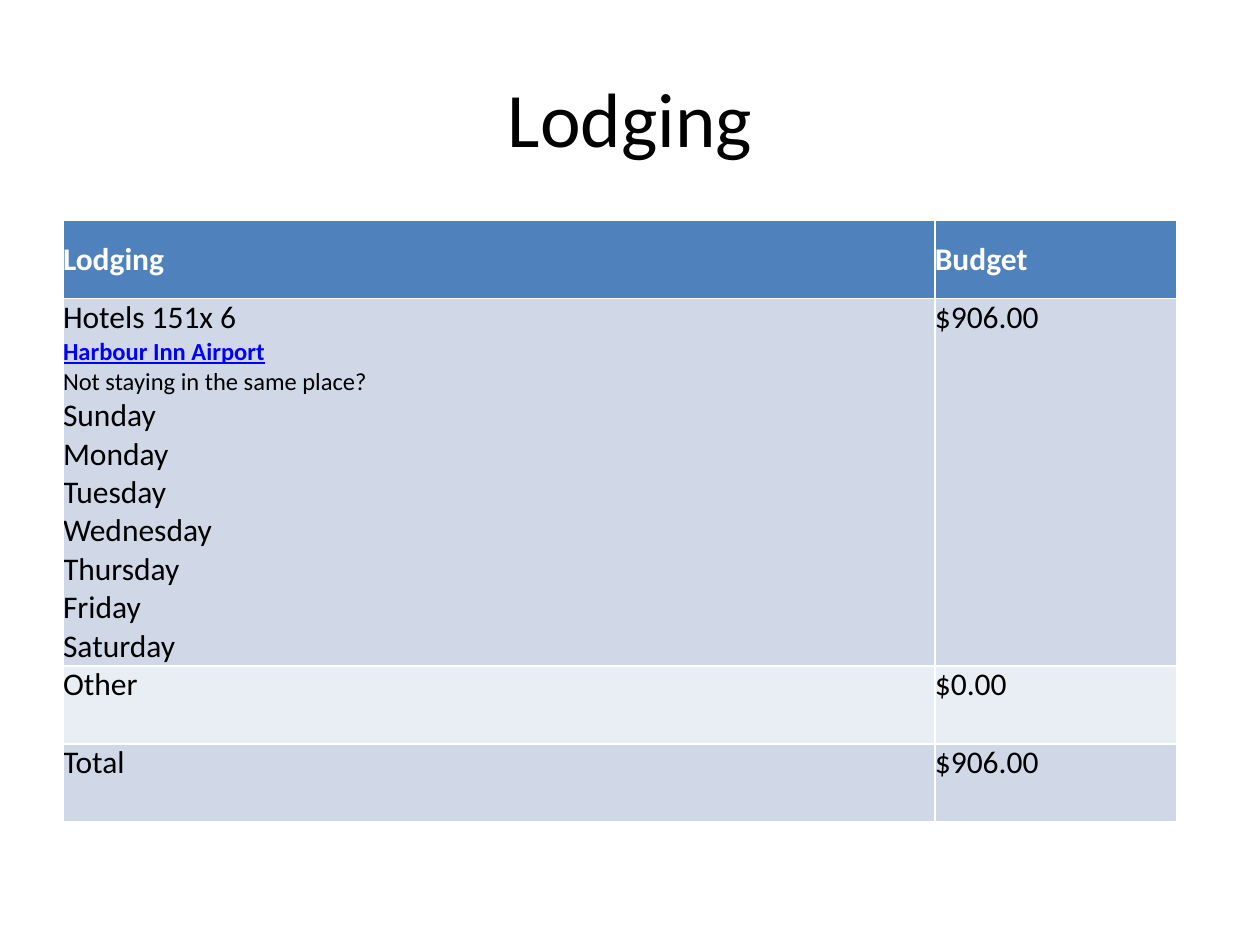
from pptx import Presentation
from pptx.dml.color import RGBColor
from pptx.enum.text import MSO_ANCHOR, PP_ALIGN
from pptx.util import Inches, Pt

FONT = "Calibri"
COLORS = {"black": "000000", "white": "FFFFFF", "link": "0000FF",
          "head": "4F81BD", "dark": "D0D8E8", "light": "E9EDF4"}
TITLE = "Lodging"
DAYS = ["Sunday", "Monday", "Tuesday", "Wednesday", "Thursday", "Friday", "Saturday"]
ROWS = [
    (["Lodging"], ["Budget"]),
    (["Hotels 151x 6", "Harbour Inn Airport", "Not staying in the same place?", *DAYS],
     ["$906.00"]),
    (["Other"], ["$0.00"]),
    (["Total"], ["$906.00"]),
]
WIDTHS = [6.92, 1.92]
HEIGHTS = [0.62, 2.88, 0.62, 0.62]
BODY = {"size": Pt(18), "bold": False, "underline": False, "color": "black"}
HEAD = BODY | {"bold": True, "color": "white"}
SPECIAL = {
    "Harbour Inn Airport": BODY | {"size": Pt(14), "bold": True,
                                   "underline": True, "color": "link"},
    "Not staying in the same place?": BODY | {"size": Pt(14)},
}


def rgb(name):
    return RGBColor.from_string(COLORS[name])


def write(para, text, style):
    run = para.add_run()
    run.text = text
    run.font.name = FONT
    for key, value in style.items():
        if key == "color":
            run.font.color.rgb = rgb(value)
        else:
            setattr(run.font, key, value)


def fill_cell(cell, lines, row):
    cell.fill.solid()
    cell.fill.fore_color.rgb = rgb("head" if row == 0 else "dark" if row % 2 else "light")
    cell.vertical_anchor = MSO_ANCHOR.MIDDLE if row == 0 else MSO_ANCHOR.TOP
    for side in ("left", "top", "right", "bottom"):
        setattr(cell, f"margin_{side}", 0)
    frame = cell.text_frame
    for i, line in enumerate(lines):
        para = frame.add_paragraph() if i else frame.paragraphs[0]
        write(para, line, SPECIAL.get(line, BODY if row else HEAD))


def main():
    deck = Presentation()
    deck.slide_width, deck.slide_height = Inches(10), Inches(7.5)
    slide = deck.slides.add_slide(deck.slide_layouts[5])

    title = slide.shapes.title
    title.left, title.top, title.width, title.height = map(Inches, (0.5, 0.3, 9, 1.25))
    title.text_frame.vertical_anchor = MSO_ANCHOR.MIDDLE
    para = title.text_frame.paragraphs[0]
    para.alignment = PP_ALIGN.CENTER
    write(para, TITLE, BODY | {"size": Pt(44)})

    table = slide.shapes.add_table(
        len(ROWS), len(WIDTHS), Inches(0.5), Inches(1.75),
        Inches(sum(WIDTHS)), Inches(sum(HEIGHTS))).table
    for column, width in zip(table.columns, WIDTHS):
        column.width = Inches(width)
    for r, (cells, height) in enumerate(zip(ROWS, HEIGHTS)):
        table.rows[r].height = Inches(height)
        for c, lines in enumerate(cells):
            fill_cell(table.cell(r, c), lines, r)
    deck.save("out.pptx")


if __name__ == "__main__":
    main()
